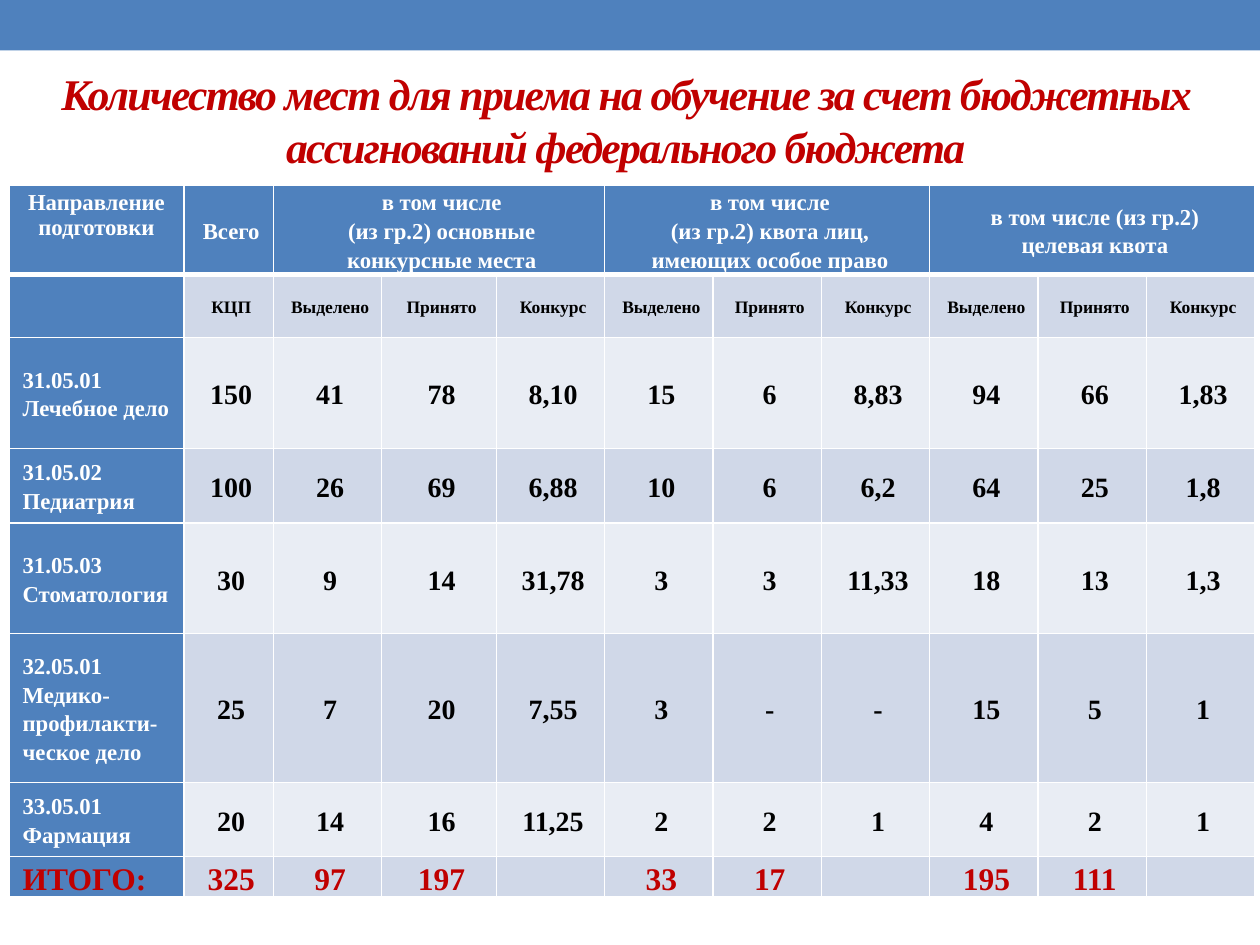
from dataclasses import dataclass

from lxml.etree import SubElement
from pptx import Presentation
from pptx.dml.color import RGBColor
from pptx.enum.shapes import MSO_SHAPE
from pptx.enum.text import MSO_ANCHOR, PP_ALIGN
from pptx.oxml.ns import qn
from pptx.table import _Cell
from pptx.text.text import _Paragraph
from pptx.util import Inches, Pt

FONT = "Times New Roman"
COLORS = {
    "blue": "4F81BD",
    "white": "FFFFFF",
    "black": "000000",
    "red": "C00000",
    "dark_band": "D0D8E8",
    "light_band": "E9EDF4",
}
TITLE = (
    "Количество мест для приема на обучение за счет бюджетных "
    "ассигнований федерального бюджета"
)
COLUMN_WIDTHS = [1.39, 0.71, 0.86, 0.91] + [0.86] * 7
HEADER_HEIGHT = 0.71
GROUPS = {
    2: "в том числе\n(из гр.2) основные конкурсные места",
    5: "в том числе\n(из гр.2) квота лиц, имеющих особое право",
    8: "в том числе (из гр.2)\nцелевая квота",
}


@dataclass
class TextStyle:
    size: float
    color: str
    align: PP_ALIGN = PP_ALIGN.CENTER
    line_spacing: float = 1.15
    italic: bool = False


@dataclass
class Row:
    height: float
    label: str
    values: list[str]
    label_style: TextStyle
    value_style: TextStyle


HEADER = TextStyle(13, "white")
LABEL = TextStyle(13, "white", PP_ALIGN.LEFT)
SUBHEADER = TextStyle(10, "black")
NUMBER = TextStyle(16, "black")
TOTAL = TextStyle(18, "red")
TOTAL_LABEL = TextStyle(18, "red", PP_ALIGN.LEFT)

ROWS = [
    Row(0.5, "", ["КЦП"] + ["Выделено", "Принято", "Конкурс"] * 3, LABEL, SUBHEADER),
    Row(0.88, "31.05.01 Лечебное дело",
        ["150", "41", "78", "8,10", "15", "6", "8,83", "94", "66", "1,83"], LABEL, NUMBER),
    Row(0.59, "31.05.02 Педиатрия",
        ["100", "26", "69", "6,88", "10", "6", "6,2", "64", "25", "1,8"], LABEL, NUMBER),
    Row(0.88, "31.05.03 Стоматология",
        ["30", "9", "14", "31,78", "3", "3", "11,33", "18", "13", "1,3"], LABEL, NUMBER),
    Row(1.18, "32.05.01 Медико-профилакти-ческое дело",
        ["25", "7", "20", "7,55", "3", "-", "-", "15", "5", "1"], LABEL, NUMBER),
    Row(0.59, "33.05.01 Фармация",
        ["20", "14", "16", "11,25", "2", "2", "1", "4", "2", "1"], LABEL, NUMBER),
    Row(0.29, "ИТОГО:",
        ["325", "97", "197", "", "33", "17", "", "195", "111", ""], TOTAL_LABEL, TOTAL),
]


def rgb(name: str) -> RGBColor:
    return RGBColor.from_string(COLORS[name])


def format_paragraph(paragraph: _Paragraph, style: TextStyle) -> None:
    paragraph.alignment = style.align
    paragraph.line_spacing = style.line_spacing
    formats = {"name": FONT, "size": Pt(style.size), "bold": True, "italic": style.italic}
    for font in [paragraph.font] + [span.font for span in paragraph.runs]:
        for attribute, value in formats.items():
            setattr(font, attribute, value)
        font.color.rgb = rgb(style.color)


def add_borders(cell: _Cell, bottom: float) -> None:
    properties = cell._tc.get_or_add_tcPr()
    for side, width in {"L": 1, "R": 1, "T": 1, "B": bottom}.items():
        line = SubElement(properties, qn(f"a:ln{side}"), w=str(Pt(width)))
        fill = SubElement(line, qn("a:solidFill"))
        SubElement(fill, qn("a:srgbClr"), val=COLORS["white"])


def fill_cell(cell: _Cell, text: str, style: TextStyle, fill: str, bottom: float = 1) -> None:
    add_borders(cell, bottom)
    cell.fill.solid()
    cell.fill.fore_color.rgb = rgb(fill)
    formats = {
        "margin_left": Inches(0.11),
        "margin_right": Inches(0.07),
        "margin_top": 0,
        "margin_bottom": 0,
        "vertical_anchor": MSO_ANCHOR.MIDDLE,
    }
    for attribute, value in formats.items():
        setattr(cell, attribute, value)
    cell.text_frame.text = text
    for paragraph in cell.text_frame.paragraphs:
        format_paragraph(paragraph, style)


def add_band(page) -> None:
    band = page.shapes.add_shape(MSO_SHAPE.RECTANGLE, 0, 0, Inches(10), Inches(0.4))
    band.shadow.inherit = False
    band.fill.solid()
    band.fill.fore_color.rgb = rgb("blue")
    band.line.fill.background()


def add_places_table(page) -> None:
    height = HEADER_HEIGHT + sum(row.height for row in ROWS)
    table = page.shapes.add_table(
        len(ROWS) + 1, len(COLUMN_WIDTHS),
        Inches(0.07), Inches(1.47), Inches(sum(COLUMN_WIDTHS)), Inches(height),
    ).table
    table.first_row = False
    table.horz_banding = False
    for column, width in zip(table.columns, COLUMN_WIDTHS):
        column.width = Inches(width)

    table.rows[0].height = Inches(HEADER_HEIGHT)
    headings = {0: "Направление подготовки", 1: "Всего"} | GROUPS
    for column in range(len(COLUMN_WIDTHS)):
        fill_cell(table.cell(0, column), headings.get(column, ""), HEADER, "blue", bottom=3)
    for column in GROUPS:
        table.cell(0, column).merge(table.cell(0, column + 2))
    corner = table.cell(0, 0)
    corner.vertical_anchor = MSO_ANCHOR.TOP
    corner.margin_left = Inches(0.07)
    corner.margin_top = Inches(0.04)
    corner.text_frame.paragraphs[0].line_spacing = 1.0

    for index, row in enumerate(ROWS, start=1):
        table.rows[index].height = Inches(row.height)
        fill_cell(table.cell(index, 0), row.label, row.label_style, "blue")
        band = "dark_band" if index % 2 else "light_band"
        for column, value in enumerate(row.values, start=1):
            fill_cell(table.cell(index, column), value, row.value_style, band)


def add_title(page) -> None:
    box = page.shapes.add_textbox(Inches(0.2), Inches(0.58), Inches(9.53), Inches(1.08))
    frame = box.text_frame
    frame.word_wrap = True
    frame.vertical_anchor = MSO_ANCHOR.MIDDLE
    frame.margin_top = 0
    frame.margin_bottom = Inches(0.34)
    frame.text = TITLE
    paragraph = frame.paragraphs[0]
    format_paragraph(paragraph, TextStyle(25, "red", line_spacing=1.0, italic=True))
    paragraph.runs[0].font._element.set("spc", "-100")


def main() -> None:
    deck = Presentation()
    deck.slide_width = Inches(10)
    deck.slide_height = Inches(7.5)
    page = deck.slides.add_slide(deck.slide_layouts[6])
    add_band(page)
    add_places_table(page)
    add_title(page)
    deck.save("out.pptx")


if __name__ == "__main__":
    main()
